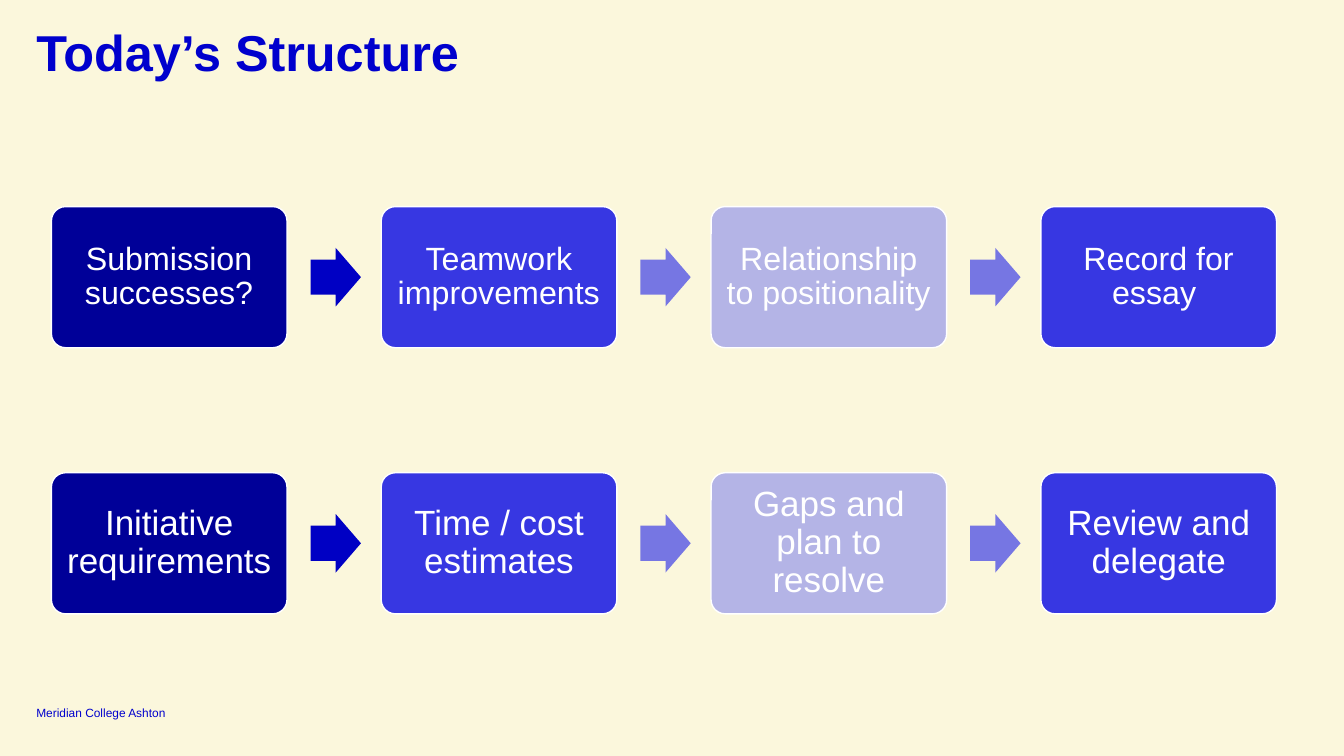
from pptx import Presentation
from pptx import util as u
from pptx.dml import color
from pptx.enum import shapes, text

SLIDE_W, SLIDE_H = 13.33, 7.5
MARGIN = 0.36
BLUE, WHITE, CREAM = "0000CD", "FFFFFF", "FBF7DC"
STEP_FILLS = ["000098", "3737E2", "B4B4E6", "3737E2"]
ARROW_FILLS = ["0000C4", "7676E3", "7676E3"]

# Process rows: top, text size, steps
ROW_LEFT, ROW_W, ROW_H = 0.51, 12.15, 1.4
PROCESSES = [
    (2.05, 23, ["Submission successes?", "Teamwork improvements",
                "Relationship to positionality", "Record for essay "]),
    (4.69, 25, ["Initiative requirements", "Time / cost estimates",
                "Gaps and plan to resolve", "Review and delegate"]),
]


def paint(fmt, hex_color):
    """Give a fill a solid colour."""
    fmt.solid()
    fmt.fore_color.rgb = color.RGBColor.from_string(hex_color)


def write(sp, words, size, hex_color, anchor, align, inset=0, bold=False):
    tf = sp.text_frame
    tf.word_wrap = True
    tf.auto_size = text.MSO_AUTO_SIZE.NONE
    tf.vertical_anchor = anchor
    tf.margin_left = tf.margin_right = u.Inches(inset)
    tf.margin_top = tf.margin_bottom = u.Inches(inset)
    p = tf.paragraphs[0]
    p.text = words
    p.alignment = align
    p.line_spacing = 0.9
    p.font.name, p.font.size, p.font.bold = "Arial", u.Pt(size), bold
    paint(p.font.fill, hex_color)


def add_block(s, kind, box, fill, adjustments):
    sp = s.shapes.add_shape(kind, *map(u.Inches, box))
    sp.shadow.inherit = False
    for i, value in enumerate(adjustments):
        sp.adjustments[i] = value
    paint(sp.fill, fill)
    sp.line.fill.background()
    return sp


def add_title(s, box, words):
    title = s.shapes.title
    title.left, title.top, title.width, title.height = map(u.Inches, box)
    write(title, words, 36, BLUE, text.MSO_ANCHOR.TOP, text.PP_ALIGN.LEFT,
          bold=True)


def add_footer(s, box, words):
    sp = s.shapes.add_textbox(*map(u.Inches, box))
    write(sp, words, 8.5, BLUE, text.MSO_ANCHOR.BOTTOM, text.PP_ALIGN.LEFT)
    sp.text_frame.paragraphs[0].line_spacing = 1.0


def add_process(s, box, steps, size):
    """Equal steps across the box, with an arrow in each gap."""
    left, top, width, height = box
    step_w = width / (len(steps) + 0.4 * (len(steps) - 1))
    pitch = 1.4 * step_w
    arrow_w, arrow_h = 0.5, 0.58
    for i, (words, fill) in enumerate(zip(steps, STEP_FILLS)):
        x = left + i * pitch
        step = add_block(s, shapes.MSO_SHAPE.ROUNDED_RECTANGLE,
                         (x, top, step_w, height), fill, [0.1])
        paint(step.line.fill, WHITE)
        step.line.width = u.Pt(1)
        write(step, words, size, WHITE, text.MSO_ANCHOR.MIDDLE,
              text.PP_ALIGN.CENTER, inset=0.1)
        if i < len(ARROW_FILLS):
            add_block(s, shapes.MSO_SHAPE.RIGHT_ARROW,
                      (x + 1.1 * step_w, top + (height - arrow_h) / 2,
                       arrow_w, arrow_h), ARROW_FILLS[i], [0.6, 0.5])


def main():
    prs = Presentation()
    prs.slide_width, prs.slide_height = u.Inches(SLIDE_W), u.Inches(SLIDE_H)
    s = prs.slides.add_slide(prs.slide_layouts[5])
    paint(s.background.fill, CREAM)

    add_title(s, (MARGIN, 0.28, 12.62, 0.41), "Today’s Structure")
    for top, size, steps in PROCESSES:
        add_process(s, (ROW_LEFT, top, ROW_W, ROW_H), steps, size)
    add_footer(s, (MARGIN, 6.99, 1.55, 0.15), "Meridian College Ashton")

    prs.save("out.pptx")


if __name__ == "__main__":
    main()
